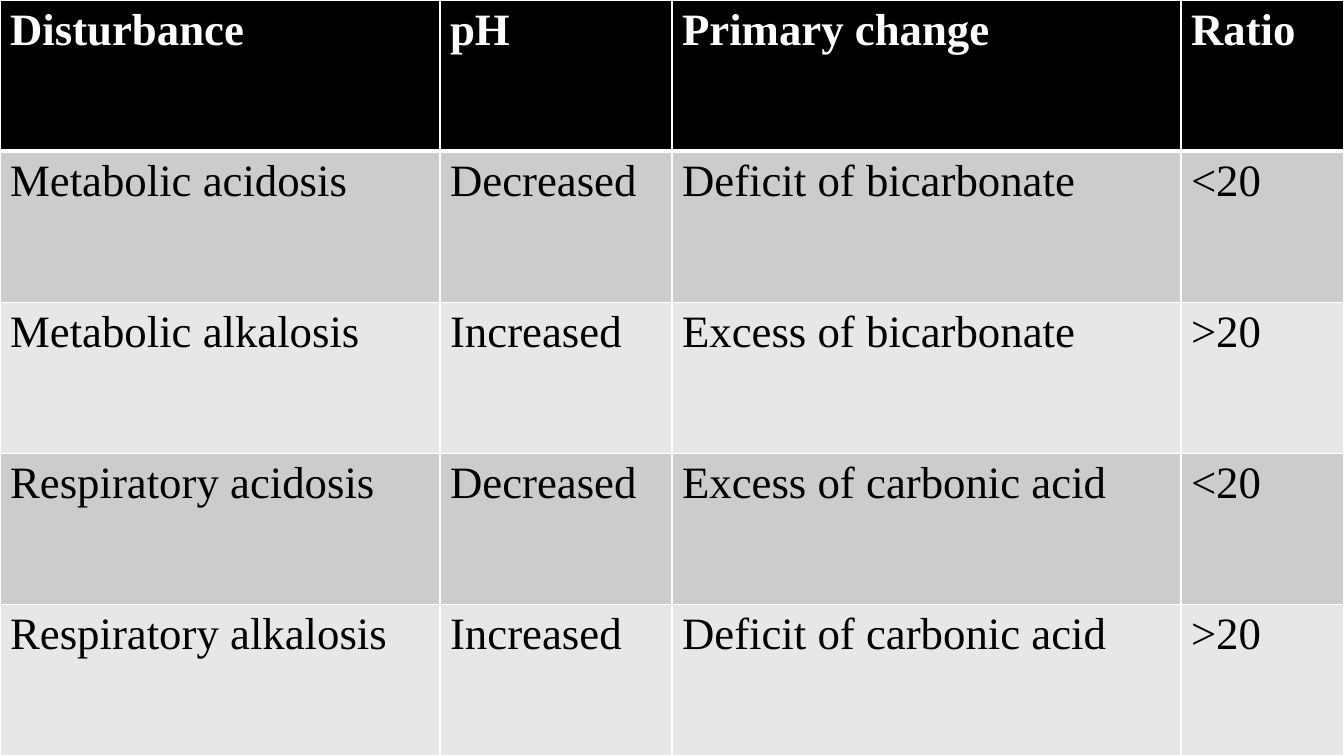
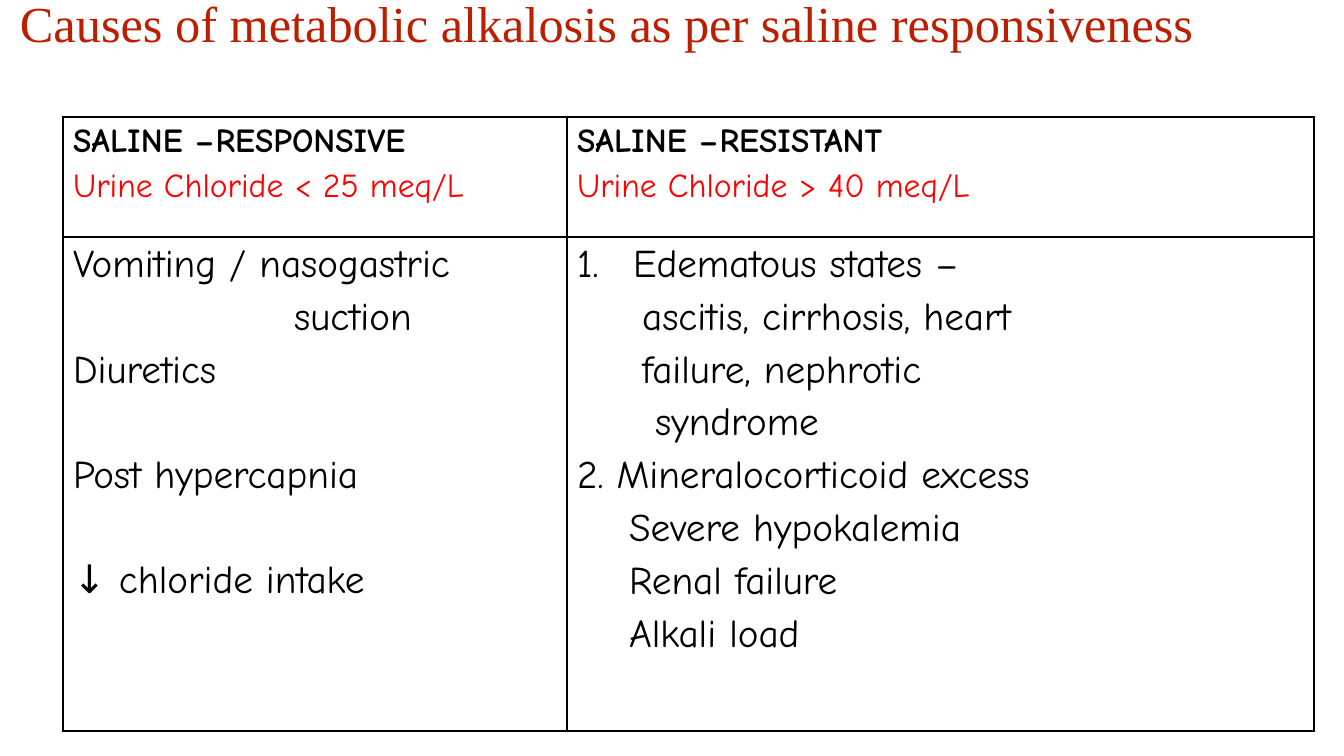
from dataclasses import dataclass
from itertools import product

from lxml.etree import SubElement
from pptx import Presentation
from pptx.dml.color import RGBColor
from pptx.enum.shapes import MSO_SHAPE
from pptx.enum.text import MSO_ANCHOR, PP_ALIGN
from pptx.oxml import parse_xml
from pptx.oxml.ns import nsdecls, qn
from pptx.util import Pt

PX = 914400 / 100.8


@dataclass(frozen=True)
class Theme:
    white: str = "FFFFFF"
    black: str = "000000"
    dark_band: str = "CCCCCC"
    light_band: str = "E7E7E7"
    title_red: str = "BC1F00"
    red: str = "FF0000"
    serif: str = "Times New Roman"
    hand: str = "Comic Neue"
    title_size: int = 36
    table_size: int = 32
    body_size: int = 28
    head_size: int = 24
    thin: float = 1
    frame: float = 2.25
    rule: float = 3


theme = Theme()


def set_text(p, text, font, size, color, bold=False):
    p.text = text
    for r in p.runs:
        r.font.name = font
        r.font.size = Pt(size)
        r.font.bold = bold
        r.font.color.rgb = RGBColor.from_string(color)


def style_cell(cell, fill, line, left, right, top, bottom):
    cell.fill.solid()
    cell.fill.fore_color.rgb = RGBColor.from_string(fill)
    tcPr = cell._tc.get_or_add_tcPr()
    for i, (side, width) in enumerate(zip("LRTB", (left, right, top, bottom))):
        tcPr.insert(i, parse_xml(
            f'<a:ln{side} {nsdecls("a")} w="{Pt(width)}"><a:solidFill>'
            f'<a:srgbClr val="{line}"/></a:solidFill></a:ln{side}>'))


prs = Presentation()
prs.slide_width = round(1344 * PX)
prs.slide_height = round(756 * PX)
blank = prs.slide_layouts[6]

s = prs.slides.add_slide(blank)
disturbances = [
    ("Disturbance", "pH", "Primary change", "Ratio"),
    ("Metabolic acidosis", "Decreased", "Deficit of bicarbonate", "<20"),
    ("Metabolic alkalosis", "Increased", "Excess of bicarbonate", ">20"),
    ("Respiratory acidosis", "Decreased", "Excess of carbonic acid", "<20"),
    ("Respiratory alkalosis", "Increased", "Deficit of carbonic acid", ">20"),
]
table = s.shapes.add_table(5, 4, 0, 0, prs.slide_width, prs.slide_height).table
table.horz_banding = False
for column, width in zip(table.columns, (440, 232, 509, 163)):
    column.width = round(width * PX)
for i, row in enumerate(disturbances):
    head = i == 0
    band = theme.dark_band if i % 2 else theme.light_band
    for j, text in enumerate(row):
        cell = table.cell(i, j)
        set_text(cell.text_frame.paragraphs[0], text, theme.serif, theme.table_size,
                 theme.white if head else theme.black, head)
        style_cell(cell, theme.black if head else band, theme.white,
                   theme.thin, theme.thin,
                   theme.rule if i == 1 else theme.thin,
                   theme.rule if head else theme.thin)

s = prs.slides.add_slide(blank)
sp = s.shapes.add_shape(MSO_SHAPE.RECTANGLE, *(round(v * PX) for v in (10, 0, 1334, 101)))
sp.shadow.inherit = False
sp.fill.solid()
sp.fill.fore_color.rgb = RGBColor.from_string(theme.white)
sp.line.fill.background()
tf = sp.text_frame
tf.word_wrap = True
tf.vertical_anchor = MSO_ANCHOR.TOP
p = tf.paragraphs[0]
p.alignment = PP_ALIGN.LEFT
p.line_spacing = Pt(34)
set_text(p, "Causes of metabolic alkalosis as per saline responsiveness",
         theme.serif, theme.title_size, theme.title_red)

headings = [
    ("SALINE –RESPONSIVE", "Urine Chloride < 25 meq/L"),
    ("SALINE –RESISTANT", "Urine Chloride > 40 meq/L"),
]
gap = theme.body_size * 0.2
wide_gap = 43
causes = [
    [
        ("Vomiting / nasogastric", 0, 0),
        ("suction", 221, gap),
        ("Diuretics", 0, gap),
        ("Post hypercapnia", 0, wide_gap),
        ("↓ chloride intake", 0, wide_gap),
    ],
    [
        ("Edematous states –", 56, 0),
        ("ascitis, cirrhosis, heart", 65, gap),
        ("failure, nephrotic", 65, gap),
        ("syndrome", 78, gap),
        ("2. Mineralocorticoid excess", 0, gap),
        ("Severe hypokalemia", 52, gap),
        ("Renal failure", 52, gap),
        ("Alkali load", 52, gap),
    ],
]
table = s.shapes.add_table(2, 2, *(round(v * PX) for v in (63, 117, 1251, 614))).table
table.horz_banding = False
for column, width in zip(table.columns, (504, 747)):
    column.width = round(width * PX)
for row, height in zip(table.rows, (120, 494)):
    row.height = round(height * PX)
for i, j in product(range(2), repeat=2):
    style_cell(table.cell(i, j), theme.white, theme.black,
               theme.thin if j else theme.frame, theme.frame if j else theme.thin,
               theme.thin if i else theme.frame, theme.frame if i else theme.thin)

for j, (heading, chloride) in enumerate(headings):
    tf = table.cell(0, j).text_frame
    set_text(tf.paragraphs[0], heading, theme.hand, theme.head_size, theme.black, True)
    p = tf.add_paragraph()
    p.space_before = Pt(theme.head_size * 0.2)
    set_text(p, chloride, theme.hand, theme.head_size, theme.red)

for j, lines in enumerate(causes):
    tf = table.cell(1, j).text_frame
    for k, (text, indent, before) in enumerate(lines):
        p = tf.add_paragraph() if k else tf.paragraphs[0]
        p.space_before = Pt(before)
        set_text(p, text, theme.hand, theme.body_size, theme.black)
        p._p.get_or_add_pPr().set("marL", str(round(indent * PX)))

pPr = table.cell(1, 1).text_frame.paragraphs[0]._p.get_or_add_pPr()
pPr.set("indent", str(round(-56 * PX)))
SubElement(pPr, qn("a:buFont"), typeface=theme.hand)
SubElement(pPr, qn("a:buAutoNum"), type="arabicPeriod")

prs.save("out.pptx")
